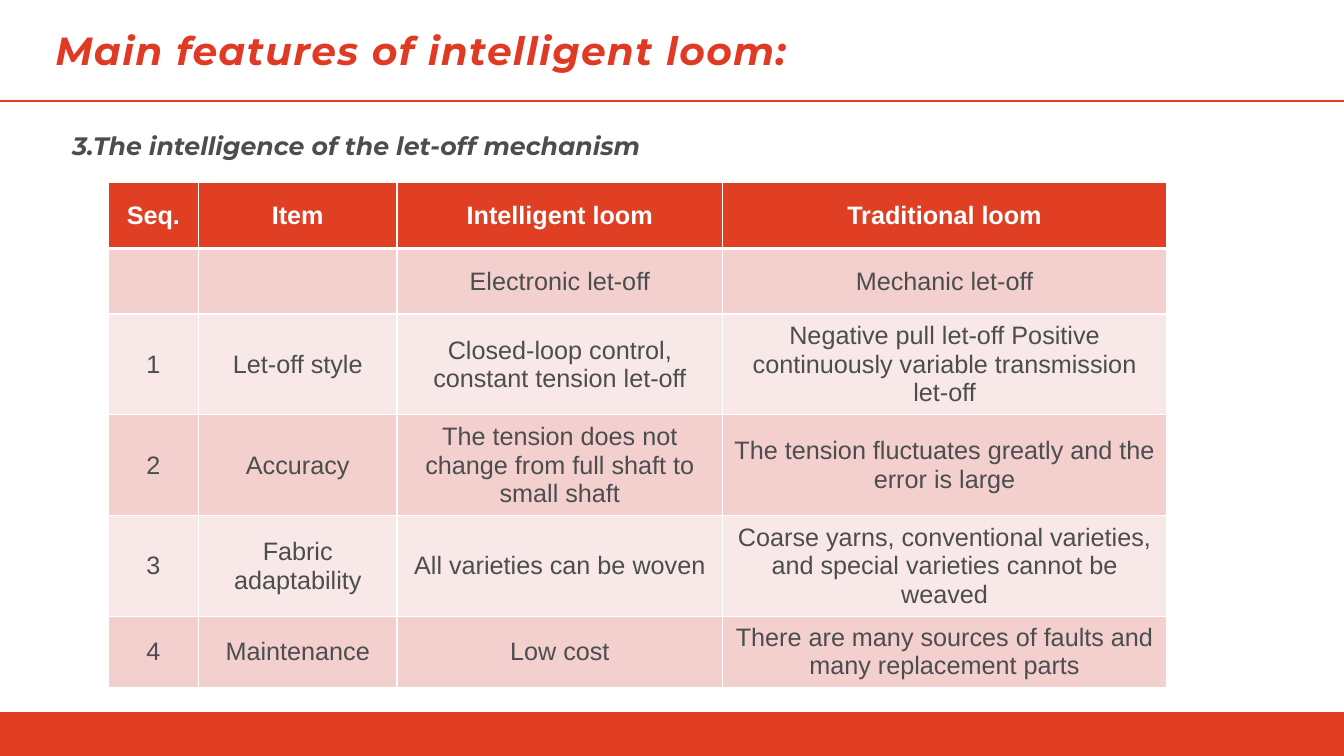
import pptx
import pptx.dml.color
import pptx.enum.shapes
import pptx.enum.text
import pptx.oxml.ns
import pptx.util
from lxml import etree

Pt = pptx.util.Pt
RGB = pptx.dml.color.RGBColor.from_string
qn = pptx.oxml.ns.qn
ALIGN = pptx.enum.text.PP_ALIGN
ANCHOR = pptx.enum.text.MSO_ANCHOR

COLORS = {
    "red": "E03F24",
    "title": "E03A24",
    "text": "4B4D4F",
    "white": "FFFFFF",
    "band": "F3CFCD",
    "light": "F9E8E8",
}


def write(tf, text, size=18, font="Arial", color="text", bold=False,
          italic=False, align=None, line_spacing=None, tracking=None):
    p = tf.paragraphs[0]
    p.alignment = align
    p.line_spacing = line_spacing
    r = p.add_run()
    r.text = text
    r.font.size = Pt(size)
    r.font.name = font
    r.font.bold = bold
    r.font.italic = italic
    r.font.color.rgb = RGB(COLORS[color])
    if tracking:
        r.font._element.set("spc", str(tracking * 100))


def border(cell, side, width):
    ln = etree.SubElement(cell._tc.get_or_add_tcPr(), qn(f"a:ln{side}"), w=str(Pt(width)))
    fill = etree.SubElement(ln, qn("a:solidFill"))
    etree.SubElement(fill, qn("a:srgbClr"), val=COLORS["white"])


prs = pptx.Presentation()
prs.slide_width = Pt(960)
prs.slide_height = Pt(540)
s = prs.slides.add_slide(prs.slide_layouts[6])

footer = s.shapes.add_shape(
    pptx.enum.shapes.MSO_SHAPE.RECTANGLE, Pt(0), Pt(508.75), Pt(960), Pt(31.25))
footer.shadow.inherit = False
footer.fill.solid()
footer.fill.fore_color.rgb = RGB(COLORS["red"])
footer.line.fill.background()

rule = s.shapes.add_connector(
    pptx.enum.shapes.MSO_CONNECTOR.STRAIGHT, Pt(0), Pt(72), Pt(960), Pt(72))
rule.line.color.rgb = RGB(COLORS["red"])
rule.line.width = Pt(1.5)
etree.SubElement(rule._element.spPr, qn("a:effectLst"))

title = s.shapes.add_textbox(Pt(32.4), Pt(19.4), Pt(862.5), Pt(62.6))
title.text_frame.word_wrap = True
write(title.text_frame, "Main features of intelligent loom:", size=28, font="Montserrat",
      color="title", bold=True, italic=True, line_spacing=0.9, tracking=1)

rows = [
    ("Seq.", "Item", "Intelligent loom", "Traditional loom"),
    ("", "", "Electronic let-off", "Mechanic let-off"),
    ("1", "Let-off style", "Closed-loop control, constant tension let-off",
     "Negative pull let-off Positive continuously variable transmission let-off"),
    ("2", "Accuracy", "The tension does not change from full shaft to small shaft",
     "The tension fluctuates greatly and the error is large"),
    ("3", "Fabric adaptability", "All varieties can be woven",
     "Coarse yarns, conventional varieties, and special varieties cannot be weaved"),
    ("4", "Maintenance", "Low cost",
     "There are many sources of faults and many replacement parts"),
]
widths = [64.5, 141.8, 232.6, 317.1]
heights = [47.2, 46.8, 68, 68, 68, 46.8]

table = s.shapes.add_table(len(rows), len(widths), Pt(77.3), Pt(130.3),
                           Pt(sum(widths)), Pt(sum(heights))).table
table.horz_banding = False
for column, width in zip(table.columns, widths):
    column.width = Pt(width)

for i, (row, height) in enumerate(zip(rows, heights)):
    table.rows[i].height = Pt(height)
    header = i == 0
    fill = "red" if header else "band" if i % 2 else "light"
    for j, text in enumerate(row):
        cell = table.cell(i, j)
        cell.vertical_anchor = ANCHOR.MIDDLE
        for side in "LRTB":
            heavy = (i, side) in ((0, "B"), (1, "T"))
            border(cell, side, 3 if heavy else 1)
        cell.fill.solid()
        cell.fill.fore_color.rgb = RGB(COLORS[fill])
        if text:
            write(cell.text_frame, text, color="white" if header else "text",
                  bold=header, align=ALIGN.CENTER)

subtitle = s.shapes.add_textbox(Pt(44.6), Pt(89.3), Pt(442), Pt(29))
subtitle.text_frame.word_wrap = False
subtitle.text_frame.auto_size = pptx.enum.text.MSO_AUTO_SIZE.SHAPE_TO_FIT_TEXT
write(subtitle.text_frame, "3.The intelligence of the let-off mechanism",
      font="Montserrat", bold=True, italic=True)

prs.save("out.pptx")
